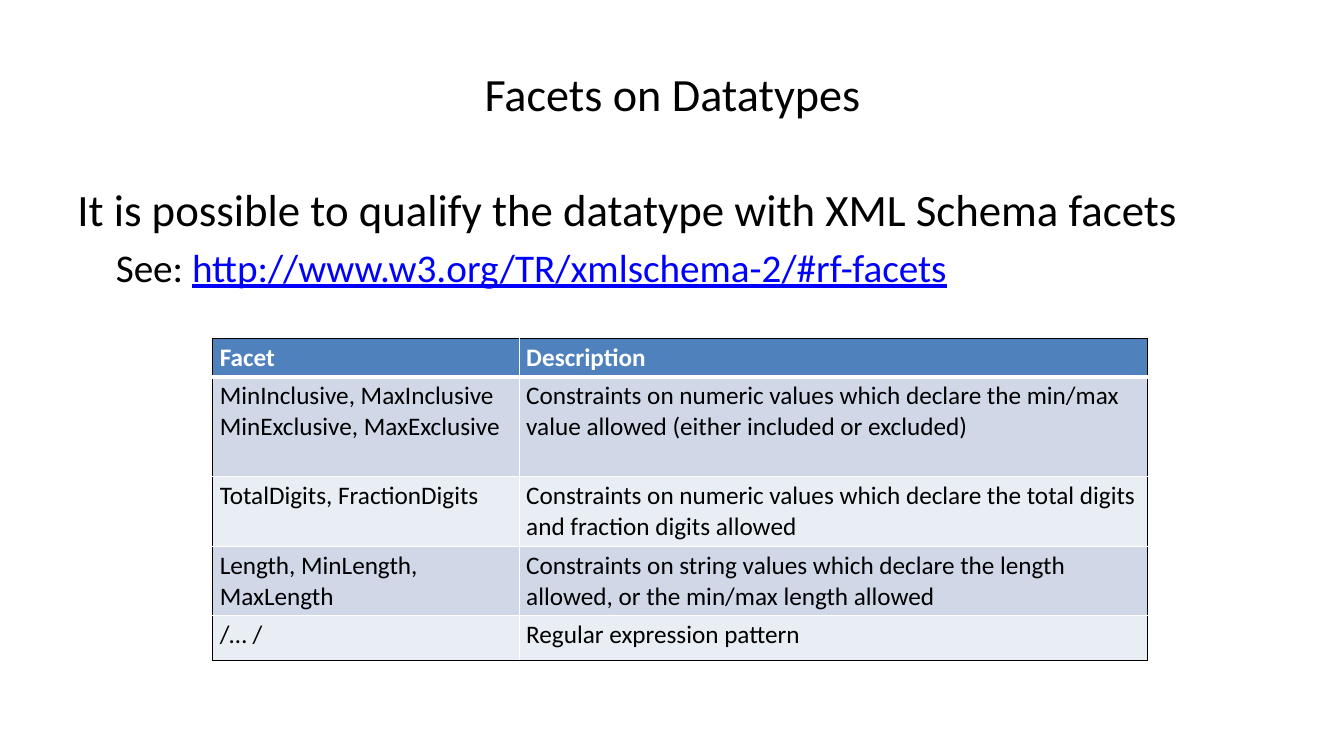
from dataclasses import dataclass

from lxml.etree import SubElement
from pptx import Presentation
from pptx.dml.color import RGBColor
from pptx.enum.text import MSO_ANCHOR, MSO_AUTO_SIZE, PP_ALIGN
from pptx.oxml.ns import qn
from pptx.util import Inches, Pt


@dataclass(frozen=True)
class Theme:
    font: str = "Calibri"
    ink: str = "000000"
    paper: str = "FFFFFF"
    link: str = "0000FF"
    header: str = "4F81BD"
    bands: tuple = ("D0D8E8", "E9EDF4")
    title_size: int = 33
    body_size: int = 32
    detail_size: int = 28
    table_size: int = 18


def apply_format(target, values):
    for name, value in values.items():
        setattr(target, name, value)


class SlideBuilder:
    def __init__(self, deck, theme):
        self.theme = theme
        self.slide = deck.slides.add_slide(deck.slide_layouts[5])

    def add_span(self, para, text, size, color, **extra):
        span = para.add_run()
        span.text = text
        apply_format(span.font, {"name": self.theme.font, "size": Pt(size), **extra})
        span.font.color.rgb = RGBColor.from_string(color)

    def place(self, shape, area):
        names = ("left", "top", "width", "height")
        apply_format(shape, dict(zip(names, map(Inches, area))))

    def title(self, text, area):
        title = self.slide.shapes.title
        self.place(title, area)
        apply_format(title.text_frame, {
            "word_wrap": True, "auto_size": MSO_AUTO_SIZE.NONE,
            "vertical_anchor": MSO_ANCHOR.MIDDLE})
        para = title.text_frame.paragraphs[0]
        para.alignment = PP_ALIGN.CENTER
        self.add_span(para, text, self.theme.title_size, self.theme.ink)

    def body(self, paragraphs, area):
        """Each paragraph is (margin, indent, size, spans)."""
        box = self.slide.shapes.add_textbox(*map(Inches, area))
        frame = box.text_frame
        frame.word_wrap = True
        for index, (margin, indent, size, spans) in enumerate(paragraphs):
            para = frame.add_paragraph() if index else frame.paragraphs[0]
            properties = para._p.get_or_add_pPr()
            properties.set("marL", str(Inches(margin)))
            properties.set("indent", str(Inches(indent)))
            if index:
                para.space_before = Pt(size * 0.2)
            for text, color, underline in spans:
                self.add_span(para, text, size, color, underline=underline)

    def border(self, cell, side, color, width):
        properties = cell._tc.get_or_add_tcPr()
        line = SubElement(properties, qn(f"a:ln{side}"), w=str(Pt(width)))
        fill = SubElement(line, qn("a:solidFill"))
        SubElement(fill, qn("a:srgbClr"), val=color)

    def table(self, rows, column_widths, row_heights, left, top):
        theme = self.theme
        last_row, last_column = len(rows) - 1, len(column_widths) - 1
        area = (left, top, sum(column_widths), sum(row_heights))
        table = self.slide.shapes.add_table(
            len(rows), len(column_widths), *map(Inches, area)).table
        for column, width in zip(table.columns, column_widths):
            column.width = Inches(width)
        for r, (texts, height) in enumerate(zip(rows, row_heights)):
            table.rows[r].height = Inches(height)
            fill = theme.bands[(r - 1) % 2] if r else theme.header
            color = theme.ink if r else theme.paper
            for c, text in enumerate(texts):
                cell = table.cell(r, c)
                apply_format(cell, {
                    "margin_left": Inches(0.07), "margin_right": Inches(0.07),
                    "margin_top": Inches(0.04), "margin_bottom": Inches(0.04)})
                # Black outer frame, white rules inside, thick rule by the header
                outer = {"L": c == 0, "R": c == last_column,
                         "T": r == 0, "B": r == last_row}
                for side, is_outer in outer.items():
                    thick = (r, side) in ((0, "B"), (1, "T"))
                    self.border(cell, side, theme.ink if is_outer else theme.paper,
                                3 if thick else 1)
                cell.fill.solid()
                cell.fill.fore_color.rgb = RGBColor.from_string(fill)
                frame = cell.text_frame
                for index, line in enumerate(text.split("\n")):
                    para = frame.add_paragraph() if index else frame.paragraphs[0]
                    self.add_span(para, line, theme.table_size, color, bold=r == 0)


FACETS = [
    ("Facet", "Description"),
    ("MinInclusive, MaxInclusive\nMinExclusive, MaxExclusive",
     "Constraints on numeric values which declare the min/max value allowed "
     "(either included or excluded)"),
    ("TotalDigits, FractionDigits",
     "Constraints on numeric values which declare the total digits and "
     "fraction digits allowed"),
    ("Length, MinLength, MaxLength",
     "Constraints on string values which declare the length allowed, "
     "or the min/max length allowed"),
    ("/… /", "Regular expression pattern"),
]


def main():
    deck = Presentation()
    apply_format(deck, {"slide_width": Inches(13.33), "slide_height": Inches(7.5)})
    theme = Theme()
    page = SlideBuilder(deck, theme)

    # Title and introduction
    page.title("Facets on Datatypes", (0.67, 0.3, 12, 1.25))
    page.body([
        (0.28, -0.28, theme.body_size, [
            ("It is possible to qualify the datatype with XML Schema facets",
             theme.ink, False)]),
        (0.61, -0.23, theme.detail_size, [
            ("See: ", theme.ink, False),
            ("http://www.w3.org/TR/xmlschema-2/#rf-facets", theme.link, True)]),
    ], (0.67, 1.75, 12, 4.95))

    # Facet table
    page.table(FACETS, (3.04, 6.23), (0.38, 0.99, 0.69, 0.69, 0.44), 2.11, 3.36)

    deck.save("out.pptx")


if __name__ == "__main__":
    main()
